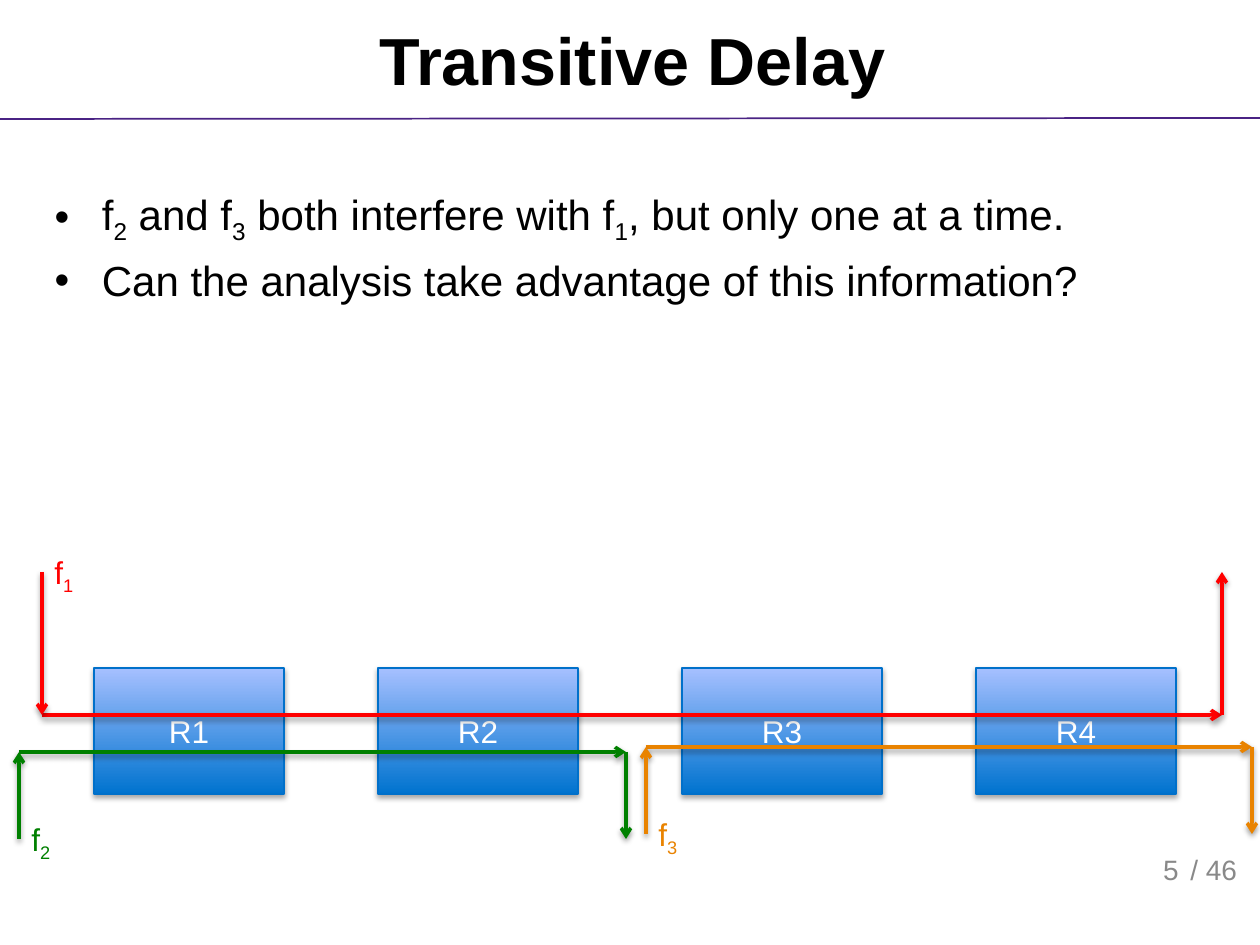
from lxml import etree
from pptx import Presentation
from pptx.dml.color import RGBColor
from pptx.enum.shapes import MSO_CONNECTOR, MSO_SHAPE
from pptx.enum.text import MSO_ANCHOR, MSO_AUTO_SIZE, PP_ALIGN
from pptx.oxml.ns import qn
from pptx.util import Emu, Pt

STRAIGHT = MSO_CONNECTOR.STRAIGHT
RECTANGLE = MSO_SHAPE.RECTANGLE
MIDDLE, BOTTOM = MSO_ANCHOR.MIDDLE, MSO_ANCHOR.BOTTOM
LEFT, CENTER, RIGHT = PP_ALIGN.LEFT, PP_ALIGN.CENTER, PP_ALIGN.RIGHT
NO_FIT = MSO_AUTO_SIZE.NONE
FIT_SHAPE = MSO_AUTO_SIZE.SHAPE_TO_FIT_TEXT

PX_PER_INCH = 126
FONT = "Arial"
BLACK, WHITE, GREY = "000000", "FFFFFF", "898989"

ROUTERS = [("R1", 94, 190), ("R2", 378, 200), ("R3", 682, 200), ("R4", 976, 200)]
FLOWS = [
    ("f_1", "FF0000", 42, 1222, 715, 572),
    ("f_2", "008000", 19, 626, 752, 839),
    ("f_3", "E98300", 646, 1252, 747, 834),
]
POINTS = [
    "f_2 and f_3 both interfere with f_1, but only one at a time.",
    "Can the analysis take advantage of this information?",
]


def px(length):
    return Emu(round(length * 914400 / PX_PER_INCH))


def rgb(colour):
    return RGBColor.from_string(colour)


def place(shape, left, top, width, height):
    shape.left, shape.top = px(left), px(top)
    shape.width, shape.height = px(width), px(height)


def write(paragraph, text, size, colour, align=LEFT, bold=False):
    paragraph.alignment = align
    first, *marked = text.split("_")
    pieces = [(first, False)]
    for part in marked:
        pieces += [(part[0], True), (part[1:], False)]
    for piece, subscript in pieces:
        if not piece:
            continue
        run = paragraph.add_run()
        run.text = piece
        run.font.name, run.font.size, run.font.bold = FONT, Pt(size), bold
        run.font.color.rgb = rgb(colour)
        if subscript:
            run._r.get_or_add_rPr().set("baseline", "-25000")


def add_shadow(shape, distance, opacity):
    effects = etree.SubElement(shape._element.spPr, qn("a:effectLst"))
    shadow = etree.SubElement(
        effects, qn("a:outerShdw"), blurRad="40000", dist=str(distance),
        dir="5400000", rotWithShape="0")
    tint = etree.SubElement(shadow, qn("a:srgbClr"), val=BLACK)
    etree.SubElement(tint, qn("a:alpha"), val=str(opacity * 1000))


def add_line(slide, start, end, colour, width):
    line = slide.shapes.add_connector(STRAIGHT, *map(px, (*start, *end)))
    line.line.color.rgb = rgb(colour)
    line.line.width = Pt(width)
    return line


def add_rule(slide):
    rule = add_line(slide, (0, 119), (1260, 118), "4A2384", 1)
    etree.SubElement(rule._element.spPr, qn("a:effectLst"))


def add_arrow(slide, start, end, colour):
    arrow = add_line(slide, start, end, colour, 2)
    outline = arrow._element.spPr.find(qn("a:ln"))
    etree.SubElement(outline, qn("a:tailEnd"), type="arrow")
    add_shadow(arrow, 20000, 38)


def add_label(slide, text, box, size, colour, align=LEFT, anchor=None):
    label = slide.shapes.add_textbox(*map(px, box))
    frame = label.text_frame
    frame.word_wrap = anchor is not None
    frame.auto_size = NO_FIT if anchor else FIT_SHAPE
    frame.vertical_anchor = anchor
    write(frame.paragraphs[0], text, size, colour, align)


def add_router(slide, name, left, width):
    router = slide.shapes.add_shape(RECTANGLE, *map(px, (left, 668, width, 126)))
    router.fill.gradient()
    router.fill.gradient_angle = 90
    for stop, colour in zip(router.fill.gradient_stops, ("0073CF", "A6C0FF")):
        stop.color.rgb = rgb(colour)
    router.line.color.rgb = rgb("0070CA")
    router.line.width = Pt(0.75)
    add_shadow(router, 23000, 35)
    router.text_frame.vertical_anchor = MIDDLE
    write(router.text_frame.paragraphs[0], name, 18, WHITE, CENTER)


def add_flow(slide, name, colour, left, right, lane, outside):
    add_arrow(slide, (left, lane), (right, lane), colour)
    add_arrow(slide, (left, outside), (left, lane), colour)
    add_arrow(slide, (right, lane), (right, outside), colour)
    add_label(slide, name, (left, outside - 25, 47, 50), 18, colour)


def fill_title(title):
    place(title, 42, 0, 1181, 118)
    title.text_frame.auto_size = NO_FIT
    title.text_frame.vertical_anchor = MIDDLE
    write(title.text_frame.paragraphs[0], "Transitive Delay", 38, BLACK, CENTER, True)


def fill_body(body):
    place(body, 42, 182, 1181, 330)
    frame = body.text_frame
    frame.auto_size = NO_FIT
    for number, point in enumerate(POINTS):
        paragraph = frame.add_paragraph() if number else frame.paragraphs[0]
        paragraph.space_before = Pt(5 if number else 0)
        write(paragraph, point, 24, BLACK)


def main():
    deck = Presentation()
    deck.slide_width, deck.slide_height = px(1260), px(945)
    slide = deck.slides.add_slide(deck.slide_layouts[1])
    add_rule(slide)
    fill_title(slide.shapes.title)
    fill_body(slide.placeholders[1])
    add_label(slide, "5", (1057, 842, 134, 50), 16, GREY, RIGHT, BOTTOM)
    add_label(slide, "/ 46", (1178, 842, 134, 50), 16, GREY, LEFT, BOTTOM)
    for router in ROUTERS:
        add_router(slide, *router)
    for flow in FLOWS:
        add_flow(slide, *flow)
    deck.save("out.pptx")


if __name__ == "__main__":
    main()
